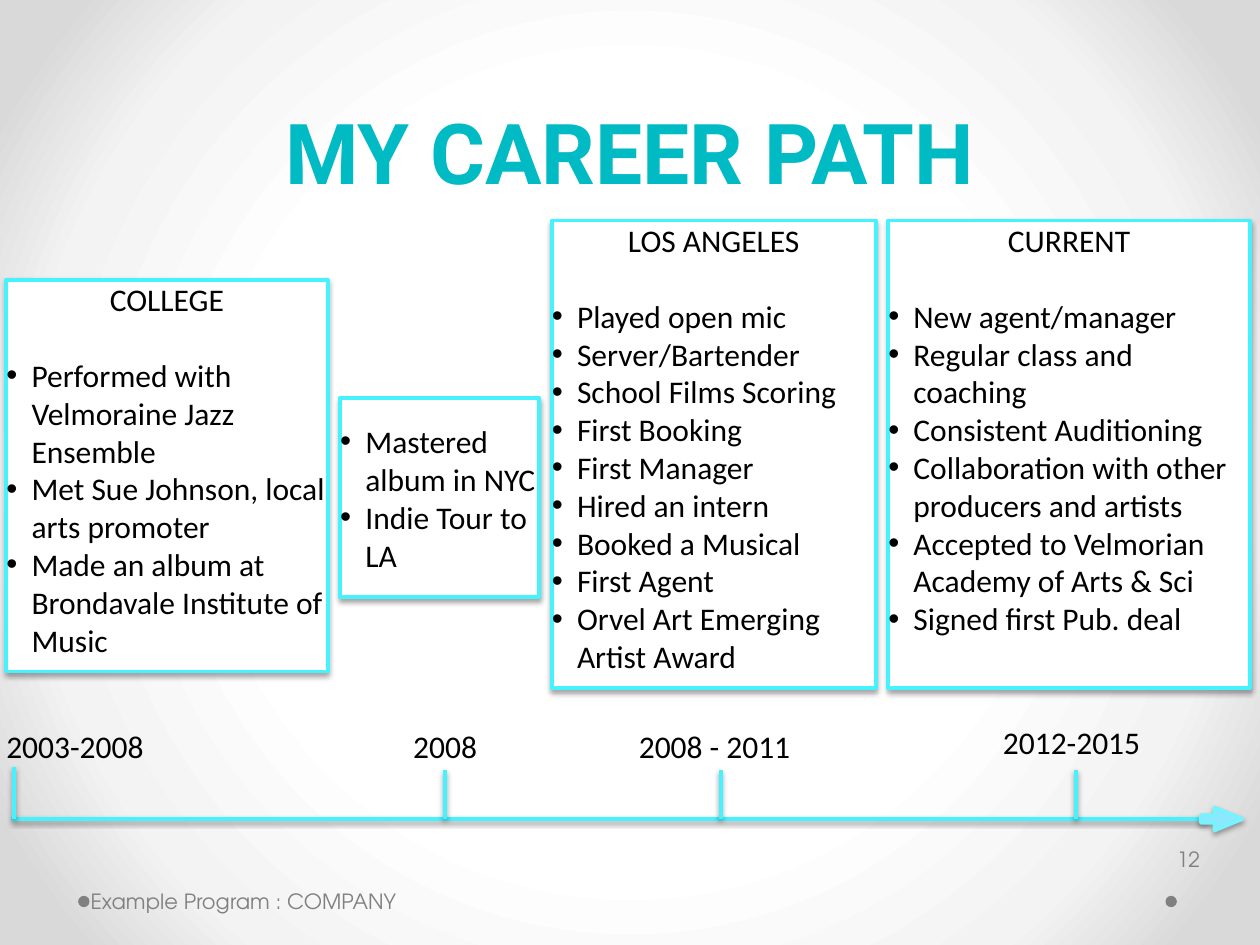
from lxml import etree
from pptx import Presentation
from pptx.dml.color import RGBColor
from pptx.enum.shapes import MSO_CONNECTOR, MSO_SHAPE
from pptx.enum.text import MSO_ANCHOR, PP_ALIGN
from pptx.oxml import parse_xml
from pptx.oxml.ns import nsdecls, qn
from pptx.util import Inches, Pt

RECTANGLE, OVAL, ARROW = MSO_SHAPE.RECTANGLE, MSO_SHAPE.OVAL, MSO_SHAPE.RIGHT_ARROW
STRAIGHT = MSO_CONNECTOR.STRAIGHT
TOP, MIDDLE, BOTTOM = MSO_ANCHOR.TOP, MSO_ANCHOR.MIDDLE, MSO_ANCHOR.BOTTOM
LEFT, CENTER = PP_ALIGN.LEFT, PP_ALIGN.CENTER

COLORS = {
    "white": "FFFFFF", "pale": "F3F3F3", "edge": "D9D9D9", "grey": "808080",
    "title": "00BAC4", "cyan": "47F2FF", "arrow": "8DE7FF", "arrow_line": "77F2FF",
    "black": "000000",
}
BODY, HEADLINE, FOOTER = "Calibri", "Roboto", "TeX Gyre Adventor"

CARDS = [
    ((0.05, 2.22, 2.55, 3.11), "COLLEGE", [
        "Performed with Velmoraine Jazz Ensemble",
        "Met Sue Johnson, local arts promoter",
        "Made an album at Brondavale Institute of Music"]),
    ((2.7, 3.16, 1.58, 1.58), None, ["Mastered album in NYC", "Indie Tour to LA"]),
    ((4.38, 1.75, 2.57, 3.71), "LOS ANGELES", [
        "Played open mic", "Server/Bartender", "School Films Scoring", "First Booking",
        "First Manager", "Hired an intern", "Booked a Musical", "First Agent",
        "Orvel Art Emerging Artist Award"]),
    ((7.05, 1.75, 2.87, 3.71), "CURRENT", [
        "New agent/manager", "Regular class and coaching", "Consistent Auditioning",
        "Collaboration with other producers and artists",
        "Accepted to Velmorian Academy of Arts & Sci", "Signed first Pub. deal"]),
]
MILESTONES = [
    ("2003-2008", 0.11, 6.09, (0, 5.72, 1.25, 0.39)),
    ("2008", 3.53, 6.11, (3.23, 5.72, 0.64, 0.39)),
    ("2008 - 2011", 5.72, 6.11, (5.02, 5.72, 1.41, 0.39)),
    ("2012-2015", 8.54, 6.11, (7.91, 5.69, 1.25, 0.39)),
]


def color(name):
    return RGBColor.from_string(COLORS[name])


def lengths(values):
    return [Inches(value) for value in values]


def add_shadow(shape, distance, opacity):
    shape._element.spPr.append(parse_xml(
        f'<a:effectLst {nsdecls("a")}><a:outerShdw blurRad="{Pt(3)}" dist="{Pt(distance)}" '
        f'dir="5400000" rotWithShape="0"><a:srgbClr val="{COLORS["black"]}">'
        f'<a:alpha val="{opacity * 1000}"/></a:srgbClr></a:outerShdw></a:effectLst>'))


def set_outline(shape, name):
    shape.line.color.rgb = color(name)
    shape.line.width = Pt(2.25)


def set_frame(shape, anchor, inset=0, wrap=True):
    frame = shape.text_frame
    frame.word_wrap = wrap
    frame.vertical_anchor = anchor
    frame.margin_left = frame.margin_right = Inches(inset)
    frame.margin_top = frame.margin_bottom = Inches(inset)
    return frame


def add_span(para, text, size=18, font=BODY, ink="black", bold=False):
    span = para.add_run()
    span.text = text
    span.font.size = Pt(size)
    span.font.name = font
    span.font.bold = bold
    span.font.color.rgb = color(ink)


def add_bullet(para):
    properties = para._p.get_or_add_pPr()
    properties.set("marL", str(Inches(0.2)))
    properties.set("indent", str(-Inches(0.2)))
    etree.SubElement(properties, qn("a:buFont"), typeface="Arial")
    etree.SubElement(properties, qn("a:buChar"), char="•")


def add_label(page, box, text, anchor=MIDDLE, inset=0, wrap=True, **style):
    label = page.shapes.add_textbox(*lengths(box))
    para = set_frame(label, anchor, inset, wrap).paragraphs[0]
    add_span(para, text, **style)
    return para


def add_background(page):
    fill = page.background.fill
    fill.gradient()
    gradient = page._element.find(".//" + qn("a:gradFill"))
    stops = "".join(
        f'<a:gs pos="{position * 1000}"><a:srgbClr val="{COLORS[name]}"/></a:gs>'
        for position, name in ((50, "white"), (76, "pale"), (92, "edge")))
    gradient.getparent().replace(gradient, parse_xml(
        f'<a:gradFill {nsdecls("a")} rotWithShape="1"><a:gsLst>{stops}</a:gsLst>'
        '<a:path path="circle"><a:fillToRect l="50000" t="50000" r="50000" b="50000"/>'
        '</a:path></a:gradFill>'))


def add_title(page, box):
    para = add_label(page, box, "MY CAREER PATH", BOTTOM,
                     size=48, font=HEADLINE, ink="title", bold=True)
    para.alignment = CENTER
    para.line_spacing = Pt(58)


def add_footer(page, box):
    left, top, width, height = box
    style = {"size": 12, "font": FOOTER, "ink": "grey"}
    for dot_left in (left, left + width - 0.09):
        dot = page.shapes.add_shape(OVAL, *lengths((dot_left, top + 0.4, 0.09, 0.09)))
        dot.shadow.inherit = False
        dot.fill.solid()
        dot.fill.fore_color.rgb = color("grey")
        dot.line.fill.background()
    add_label(page, (left + 0.1, top + 0.34, 3.11, 0.21), "Example Program : COMPANY", **style)
    add_label(page, (left + width, top, 0.61, 0.21), "12", **style)


def add_card(page, box, heading, items):
    card = page.shapes.add_shape(RECTANGLE, *lengths(box))
    card.fill.solid()
    card.fill.fore_color.rgb = color("white")
    set_outline(card, "cyan")
    add_shadow(card, 1.8, 35)
    frame = set_frame(card, TOP if heading else MIDDLE)
    lines = [heading, *items] if heading else items
    for index, text in enumerate(lines):
        para = frame.add_paragraph() if index else frame.paragraphs[0]
        if text == heading:
            para.alignment = CENTER
            para.space_after = Pt(22)
        else:
            para.alignment = LEFT
            add_bullet(para)
        add_span(para, text)


def add_rule(page, start, end):
    rule = page.shapes.add_connector(STRAIGHT, *lengths((*start, *end)))
    set_outline(rule, "cyan")
    add_shadow(rule, 1.6, 38)


def add_timeline(page, box):
    left, top, width, height = box
    middle = top + height / 2
    add_rule(page, (left, middle), (left + width - 0.29, middle))
    for text, tick, tick_top, label_box in MILESTONES:
        add_rule(page, (tick, middle), (tick, tick_top))
        add_label(page, label_box, text, TOP, inset=0.05, wrap=False)
    arrow = page.shapes.add_shape(ARROW, *lengths((left + width - 0.33, top, 0.33, height)))
    arrow.adjustments[0] = 0.32
    arrow.adjustments[1] = 1.22
    arrow.fill.solid()
    arrow.fill.fore_color.rgb = color("arrow")
    set_outline(arrow, "arrow_line")
    add_shadow(arrow, 1.8, 35)


def main():
    deck = Presentation()
    deck.slide_width, deck.slide_height = lengths((10, 7.5))
    page = deck.slides.add_slide(deck.slide_layouts[6])
    add_background(page)
    add_footer(page, (0.62, 6.71, 8.72, 0.55))
    add_title(page, (0.5, 0.15, 9, 1.45))
    for box, heading, items in CARDS:
        add_card(page, box, heading, items)
    add_timeline(page, (0.09, 6.41, 9.77, 0.18))
    deck.save("out.pptx")


if __name__ == "__main__":
    main()
